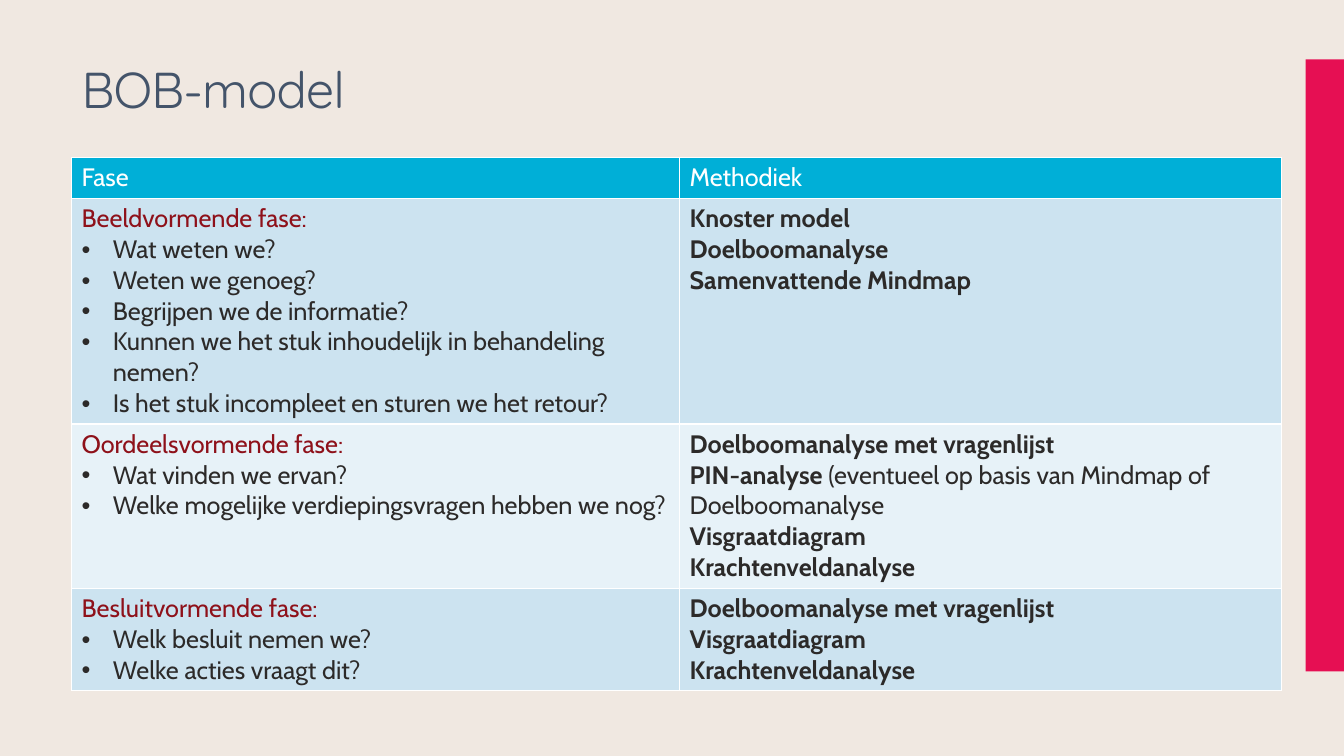
from pptx import Presentation
from pptx.dml.color import RGBColor
from pptx.enum.shapes import MSO_SHAPE
from pptx.enum.text import MSO_ANCHOR, PP_ALIGN
from pptx.util import Inches, Pt
from lxml.etree import SubElement
from pptx.oxml.ns import qn

TITLE = "BOB-model"
HEADS = ("Fase", "Methodiek")
PHASES = [
    ("Beeldvormende fase:",
     ["Wat weten we?", "Weten we genoeg?", "Begrijpen we de informatie?",
      "Kunnen we het stuk inhoudelijk in behandeling nemen?",
      "Is het stuk incompleet en sturen we het retour?"],
     [("Knoster model", ""), ("Doelboomanalyse", ""),
      ("Samenvattende Mindmap", "")]),
    ("Oordeelsvormende fase:",
     ["Wat vinden we ervan?",
      "Welke mogelijke verdiepingsvragen hebben we nog?"],
     [("Doelboomanalyse met vragenlijst", ""),
      ("PIN-analyse ", "(eventueel op basis van Mindmap of Doelboomanalyse"),
      ("Visgraatdiagram", ""), ("Krachtenveldanalyse", "")]),
    ("Besluitvormende fase:",
     ["Welk besluit nemen we?", "Welke acties vraagt dit?"],
     [("Doelboomanalyse met vragenlijst", ""), ("Visgraatdiagram", ""),
      ("Krachtenveldanalyse", "")]),
]
HEX = dict(back="F0E8E1", bar="E60F53", title="44546A", head="00AFD7",
           odd="CCE3F0", even="E7F2F8", phase="8E111A", ink="2C2A29",
           white="FFFFFF")
WIDE, HIGH = 13.33, 7.5
LEFT, TOP = 0.71, 0.59
COLS = (6.03, 5.97)
ROWS = (0.41, 2.23, 1.63, 1.01)
INDENT = 0.31


def color(name):
    return RGBColor.from_string(HEX[name])


def paint(fill, name):
    fill.solid()
    fill.fore_color.rgb = color(name)


def write(para, text, hue, size=18, face="Cabin", bold=False):
    run = para.add_run()
    run.text = text
    for key, value in dict(name=face, size=Pt(size), bold=bold).items():
        setattr(run.font, key, value)
    run.font.color.rgb = color(hue)
    return run


def dot(para):
    props = para._p.get_or_add_pPr()
    props.set("marL", str(Inches(INDENT)))
    props.set("indent", str(-Inches(INDENT)))
    SubElement(props, qn("a:buFont"), typeface="Arial")
    SubElement(props, qn("a:buChar"), char="•")


def place(shape, *box):
    for key, value in zip(("left", "top", "width", "height"), box):
        setattr(shape, key, Inches(value))


deck = Presentation()
deck.slide_width, deck.slide_height = Inches(WIDE), Inches(HIGH)
slide = deck.slides.add_slide(deck.slide_layouts[5])
paint(slide.background.fill, "back")

bar = slide.shapes.add_shape(MSO_SHAPE.RECTANGLE, 0, 0, 0, 0)
place(bar, 12.95, TOP, WIDE - 12.95, 6.07)
bar.shadow.inherit = False
paint(bar.fill, "bar")
bar.line.fill.background()

title = slide.shapes.title
place(title, LEFT, TOP, 11.94, 0.65)
title.text_frame.vertical_anchor = MSO_ANCHOR.MIDDLE
para = title.text_frame.paragraphs[0]
para.alignment, para.line_spacing = PP_ALIGN.LEFT, 0.9
run = write(para, TITLE, "title", 36, "Quicksand")
run.font._element.set("spc", "-60")

grid = slide.shapes.add_table(
    len(ROWS), len(COLS), Inches(LEFT), Inches(1.56),
    Inches(sum(COLS)), Inches(sum(ROWS))).table
for col, width in zip(grid.columns, COLS):
    col.width = Inches(width)
for row, height in zip(grid.rows, ROWS):
    row.height = Inches(height)

for i, head in enumerate(HEADS):
    cell = grid.cell(0, i)
    paint(cell.fill, "head")
    write(cell.text_frame.paragraphs[0], head, "white")

for i, (phase, asks, tools) in enumerate(PHASES, 1):
    left, right = grid.cell(i, 0), grid.cell(i, 1)
    for cell in (left, right):
        paint(cell.fill, "odd" if i % 2 else "even")
    write(left.text_frame.paragraphs[0], phase, "phase")
    for ask in asks:
        para = left.text_frame.add_paragraph()
        dot(para)
        write(para, ask, "ink")
    frame = right.text_frame
    for j, (tool, note) in enumerate(tools):
        para = frame.add_paragraph() if j else frame.paragraphs[0]
        write(para, tool, "ink", bold=True)
        if note:
            write(para, note, "ink")

deck.save("out.pptx")
